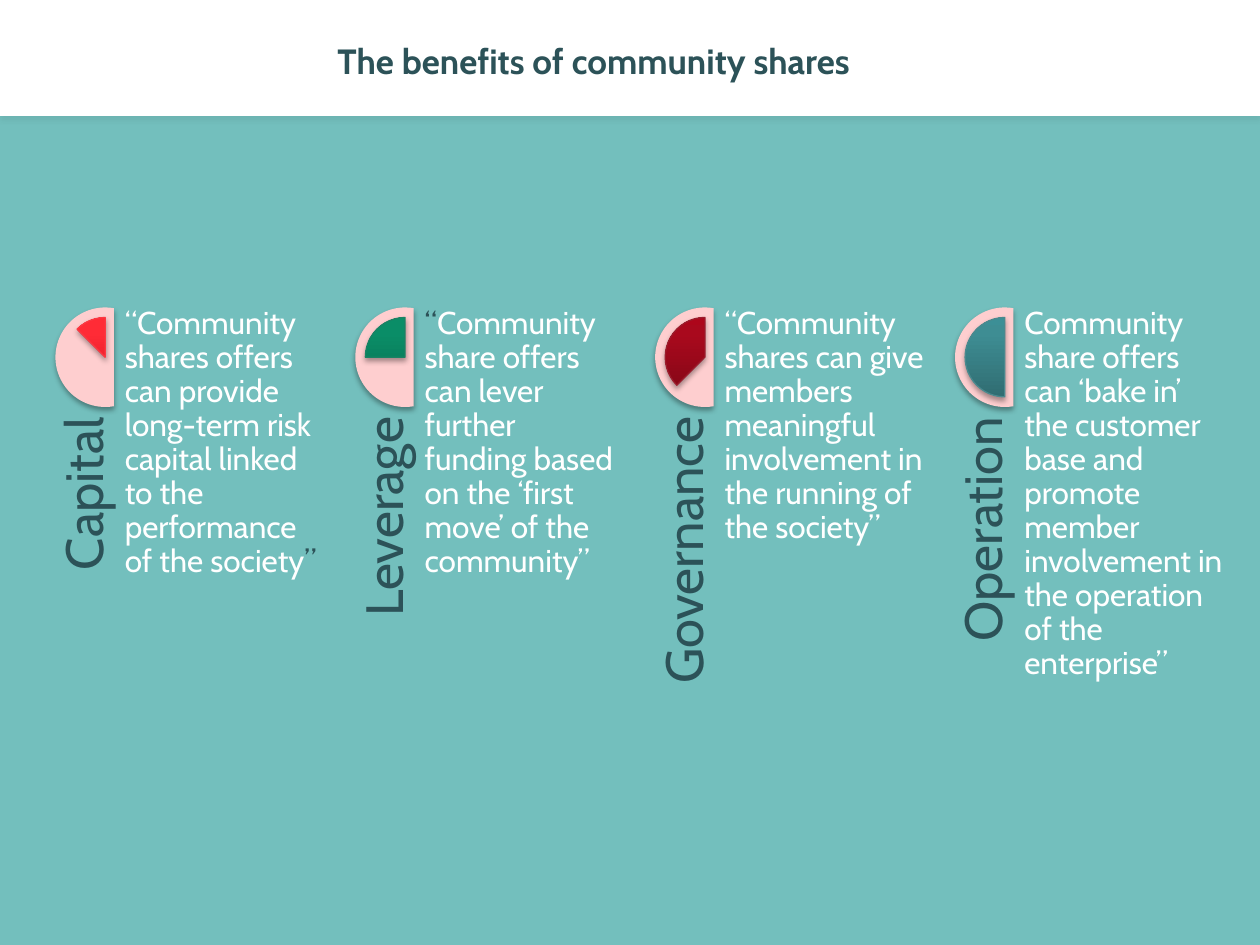
from copy import deepcopy

from lxml.etree import SubElement
from pptx import Presentation
from pptx.dml.color import RGBColor
from pptx.enum.shapes import MSO_SHAPE
from pptx.enum.text import MSO_ANCHOR, PP_ALIGN
from pptx.oxml.ns import qn
from pptx.util import Inches, Pt

COLORS = {"background": "73BFBD", "white": "FFFFFF", "dark": "2C5258", "chord": "FECECF", "shadow": "000000"}
BENEFITS = [
    {"label": "Capital", "angle": 135, "line": "FC3842", "stops": ["D2141E", "FF2B36", "FF2D38"],
     "runs": [("“Community shares offers can provide long-term risk capital linked to the performance of the society",
               "white"), ("”", "dark")]},
    {"label": "Leverage", "angle": 108, "line": "1A8264", "stops": ["086D50", "0A8D67", "089069"],
     "runs": [("“", "dark"),
              ("Community share offers can lever further funding based on the ‘first move’ of the community”", "white")]},
    {"label": "Governance", "angle": 81, "line": "9B1C2C", "stops": ["820716", "A9091D", "AD061B"],
     "runs": [("“Community shares can give members meaningful involvement in the running of the society”", "white")]},
    {"label": "Operation", "angle": 54, "line": "4A898E", "stops": ["306D72", "3E8D93", "3C8F96"],
     "runs": [("Community share offers can ‘bake in’ the customer base and promote member involvement "
               "in the operation of the enterprise”", "white")]},
]
STOP_POSITIONS = [0, 0.8, 1]
NO_MARGINS = {"margin_left": 0, "margin_top": 0, "margin_right": 0, "margin_bottom": 0}


def add_shadowed_shape(shapes, kind, box, alpha, adjustments=()):
    shape = shapes.add_shape(kind, *map(Inches, box))
    for index, value in enumerate(adjustments):
        shape.adjustments[index] = value
    shape.line.fill.background()
    shape.shadow.inherit = False
    effects = shape.element.spPr.find(qn("a:effectLst"))
    shadow = SubElement(effects, qn("a:outerShdw"), blurRad=str(Pt(3.1)), dist=str(Pt(1.8)),
                        dir="5400000", rotWithShape="0")
    color = SubElement(shadow, qn("a:srgbClr"), val=COLORS["shadow"])
    SubElement(color, qn("a:alpha"), val=str(alpha * 1000))
    return shape


def add_text(shapes, box, runs, font_format, frame_format, paragraph_format):
    text_box = shapes.add_textbox(*map(Inches, box))
    frame = text_box.text_frame
    for name, value in {"word_wrap": True, **frame_format}.items():
        setattr(frame, name, value)
    paragraph = frame.paragraphs[0]
    for name, value in paragraph_format.items():
        setattr(paragraph, name, value)
    for text, color in runs:
        run = paragraph.add_run()
        run.text = text
        for name, value in {"name": "Cabin", **font_format}.items():
            setattr(run.font, name, value)
        run.font.color.rgb = RGBColor.from_string(COLORS[color])
    return text_box


presentation = Presentation()
presentation.slide_width = Inches(10)
presentation.slide_height = Inches(7.5)
slide = presentation.slides.add_slide(presentation.slide_layouts[6])
slide.background.fill.solid()
slide.background.fill.fore_color.rgb = RGBColor.from_string(COLORS["background"])

header = add_shadowed_shape(slide.shapes, MSO_SHAPE.RECTANGLE, (0, 0, 10, 0.92), 5)
header.fill.solid()
header.fill.fore_color.rgb = RGBColor.from_string(COLORS["white"])
add_text(slide.shapes, (2.58, 0.17, 6.83, 0.62), [("The benefits of community shares", "dark")],
         {"size": Pt(20), "bold": True}, {"vertical_anchor": MSO_ANCHOR.MIDDLE}, {})

benefits_group = slide.shapes.add_group_shape()
for column, benefit in enumerate(BENEFITS):
    left = 0.44 + column * 2.38
    chord = add_shadowed_shape(benefits_group.shapes, MSO_SHAPE.CHORD, (left, 2.44, 0.79, 0.79), 35, (48, 168))
    chord.fill.solid()
    chord.fill.fore_color.rgb = RGBColor.from_string(COLORS["chord"])

    pie = add_shadowed_shape(benefits_group.shapes, MSO_SHAPE.PIE, (left + 0.08, 2.52, 0.63, 0.63), 35,
                             (benefit["angle"], 162))
    pie.fill.gradient()
    pie.fill.gradient_angle = 90
    stop_list = pie.element.spPr.find(qn("a:gradFill")).find(qn("a:gsLst"))
    stop_list.append(deepcopy(stop_list[0]))
    for stop, position, color in zip(pie.fill.gradient_stops, STOP_POSITIONS, benefit["stops"]):
        stop.position = position
        stop.color.rgb = RGBColor.from_string(color)
    pie.line.width = Pt(0.75)
    pie.line.color.rgb = RGBColor.from_string(benefit["line"])

    label = add_text(benefits_group.shapes, (left - 0.92, 4.22, 2.3, 0.48), [(benefit["label"], "dark")],
                     {"size": Pt(30)}, {**NO_MARGINS, "vertical_anchor": MSO_ANCHOR.BOTTOM},
                     {"alignment": PP_ALIGN.RIGHT, "line_spacing": 0.9})
    label.rotation = 270
    add_text(benefits_group.shapes, (left + 0.55, 2.44, 1.58, 3.17), benefit["runs"],
             {"size": Pt(18)}, NO_MARGINS, {"line_spacing": 0.9})

presentation.save("out.pptx")
